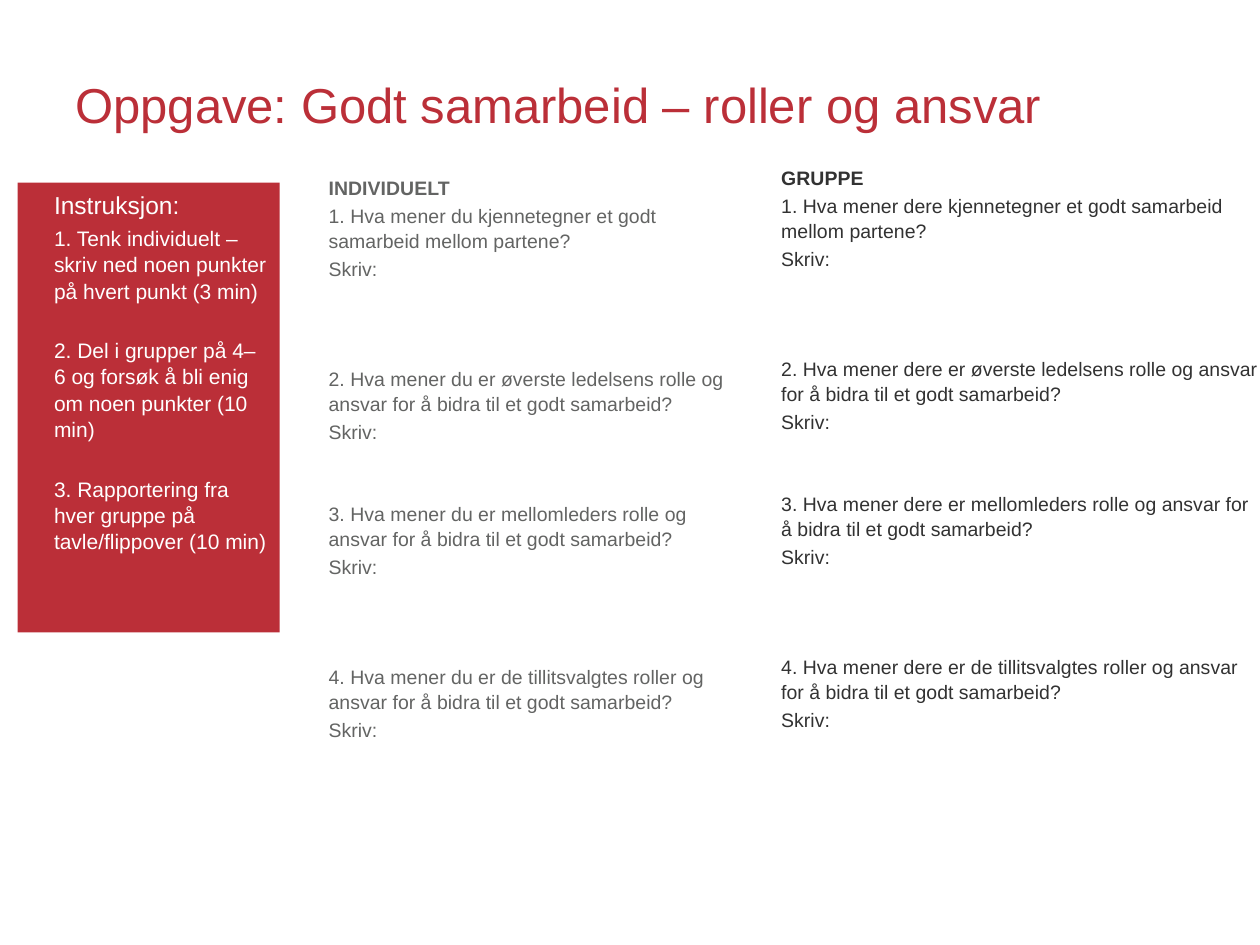
import pptx
import pptx.util
import pptx.dml.color
import pptx.enum.shapes
import pptx.enum.text

Inches, Pt = pptx.util.Inches, pptx.util.Pt
ANCHOR = pptx.enum.text.MSO_ANCHOR
COLORS = {"red": "BB2F38", "grey": "636463", "dark": "323232", "white": "FFFFFF"}
TASKS = [
    "kjennetegner et godt samarbeid mellom partene?",
    "er øverste ledelsens rolle og ansvar for å bidra til et godt samarbeid?",
    "er mellomleders rolle og ansvar for å bidra til et godt samarbeid?",
    "er de tillitsvalgtes roller og ansvar for å bidra til et godt samarbeid?",
]
ROOM = [2.2, 48.8, 33.2, 48.8]  # points above each task, leaving room to write
STEPS = [
    "1. Tenk individuelt – skriv ned noen punkter på hvert punkt (3 min)",
    "2. Del i grupper på 4– 6 og forsøk å bli enig om noen punkter (10 min)",
    "3. Rapportering fra hver gruppe på tavle/flippover (10 min)",
]


def color(name):
    return pptx.dml.color.RGBColor.from_string(COLORS[name])


def add_box(slide, box, fill=None):
    """Add a filled rectangle, or a plain text box when there is no fill."""
    place = [Inches(n) for n in box]
    if fill is None:
        shape = slide.shapes.add_textbox(*place)
    else:
        shape = slide.shapes.add_shape(pptx.enum.shapes.MSO_SHAPE.RECTANGLE, *place)
        shape.shadow.inherit = False
        shape.fill.solid()
        shape.fill.fore_color.rgb = color(fill)
        shape.line.fill.background()
    shape.text_frame.word_wrap = True
    shape.text_frame.vertical_anchor = ANCHOR.TOP
    return shape.text_frame


def write(frame, rows, ink, indent=0.19, lead=1.05):
    """Write rows of (text, size, bold, space before)."""
    for i, (text, size, bold, before) in enumerate(rows):
        para = frame.paragraphs[0] if i == 0 else frame.add_paragraph()
        para.text = text
        para.alignment = pptx.enum.text.PP_ALIGN.LEFT
        para.line_spacing = lead
        para.space_before = Pt(before)
        para._p.get_or_add_pPr().set("marL", str(Inches(indent)))
        style = {"name": "Arial", "size": Pt(size), "bold": bold}
        for key, value in style.items():
            setattr(para.font, key, value)
        para.font.color.rgb = color(ink)


def add_title(slide, box):
    frame = add_box(slide, box)
    frame.vertical_anchor = ANCHOR.MIDDLE
    title = "Oppgave: Godt samarbeid – roller og ansvar"
    write(frame, [(title, 28, False, 0)], "red", indent=0, lead=1)


def add_steps(slide, box):
    rows = [("Instruksjon:", 14, False, 0)]
    rows += [(text, 12, False, gap) for text, gap in zip(STEPS, [2.4, 18.8, 18.8])]
    write(add_box(slide, box, "red"), rows, "white")


def add_tasks(slide, box, head, who, ink, fill=None, inset=None):
    frame = add_box(slide, box, fill)
    if inset is not None:
        for side in ("left", "top", "right", "bottom"):
            setattr(frame, "margin_" + side, Inches(inset))
    rows = [(head, 11.1, True, 0)]
    for i, (task, room) in enumerate(zip(TASKS, ROOM), 1):
        rows.append((f"{i}. Hva mener {who} {task}", 11.1, False, room))
        rows.append(("Skriv:", 11.1, False, 2.2))
    write(frame, rows, ink)


def main():
    deck = pptx.Presentation()
    deck.slide_width, deck.slide_height = Inches(10), Inches(7.5)
    slide = deck.slides.add_slide(deck.slide_layouts[6])
    add_title(slide, (0.5, 0.2, 9, 1.25))
    add_tasks(slide, (2.32, 1.34, 3.56, 4.99), "INDIVIDUELT", "du", "grey")
    add_steps(slide, (0.14, 1.45, 2.08, 3.57))
    add_tasks(slide, (6.01, 1.31, 3.99, 5.47), "GRUPPE", "dere", "dark", "white", 0)
    deck.save("out.pptx")


if __name__ == "__main__":
    main()
